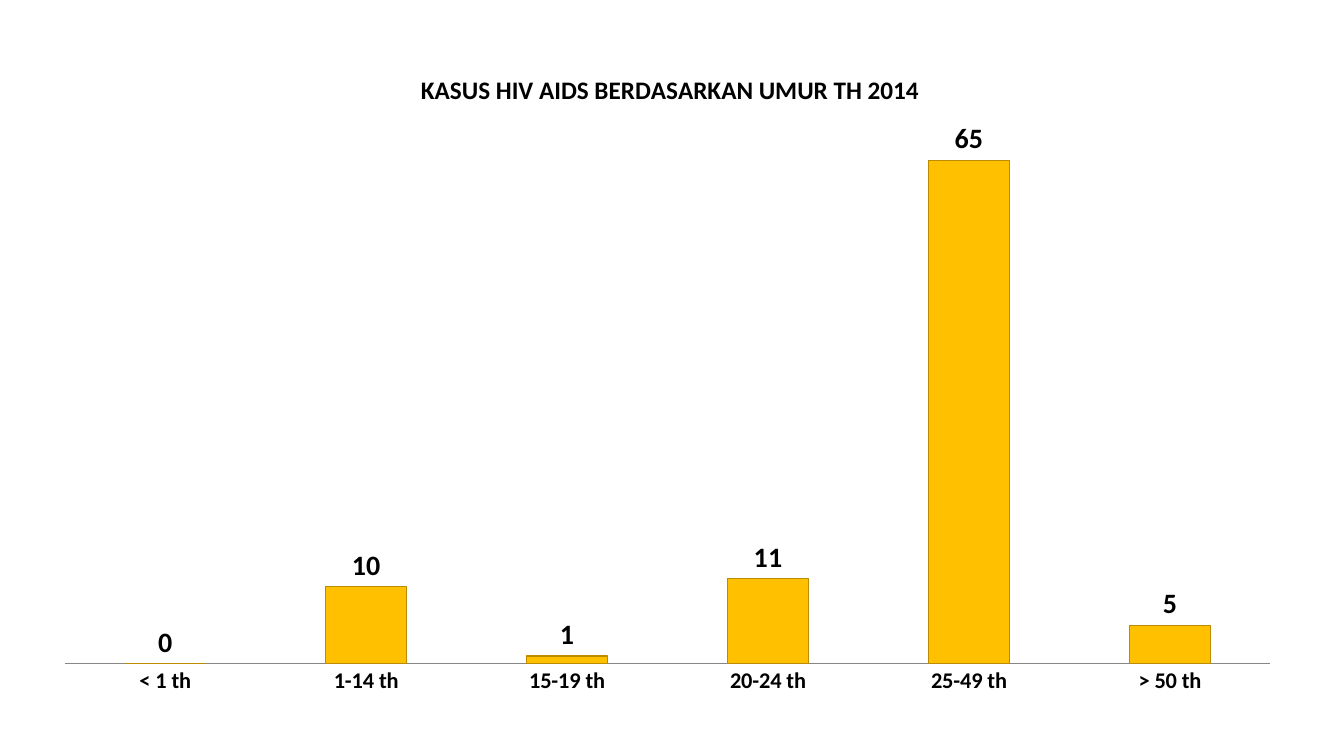
import pptx
import pptx.chart.data
import pptx.dml.color
import pptx.enum.chart
import pptx.oxml
import pptx.oxml.ns
import pptx.util

Cm = pptx.util.Cm
Pt = pptx.util.Pt
RGBColor = pptx.dml.color.RGBColor

BLACK = RGBColor(0x00, 0x00, 0x00)
GOLD = RGBColor(0xFF, 0xC0, 0x00)
BRONZE = RGBColor(0xBC, 0x8C, 0x00)
GREY = RGBColor(0x87, 0x87, 0x87)

CASES = {
    "< 1 th": 0,
    "1-14 th": 10,
    "15-19 th": 1,
    "20-24 th": 11,
    "25-49 th": 65,
    "> 50 th": 5,
}


def style(font, size, bold=True, color=BLACK):
    font.name = "Calibri"
    font.size = Pt(size)
    font.bold = bold
    font.color.rgb = color


def write(frame, text, **form):
    """Put one run of text in the frame and format it."""
    run = frame.paragraphs[0].add_run()
    run.text = text
    style(run.font, **form)


def place(parent, index, target=None, **parts):
    """Set a manual layout, in fractions of the chart, as child number index."""
    for old in parent.findall(pptx.oxml.ns.qn("c:layout")):
        parent.remove(old)
    inner = f'<c:layoutTarget val="{target}"/>' if target else ""
    inner += "".join(f'<c:{key}Mode val="edge"/>' for key in ("x", "y"))
    inner += "".join(f'<c:{key} val="{part}"/>' for key, part in parts.items())
    space = pptx.oxml.ns.nsdecls("c")
    layout = pptx.oxml.parse_xml(
        f"<c:layout {space}><c:manualLayout>{inner}</c:manualLayout></c:layout>"
    )
    parent.insert(index, layout)


def add_bars(slide, cases, left, top, width, height):
    data = pptx.chart.data.CategoryChartData()
    data.categories = list(cases)
    data.add_series("Series 1", list(cases.values()))
    kind = pptx.enum.chart.XL_CHART_TYPE.COLUMN_CLUSTERED
    chart = slide.shapes.add_chart(kind, left, top, width, height, data).chart
    style(chart.font, 10, bold=False)
    chart.has_legend = False
    plot = chart.plots[0]
    plot.gap_width = 150
    plot.vary_by_categories = False
    bars = plot.series[0].format
    bars.fill.solid()
    bars.fill.fore_color.rgb = GOLD
    bars.line.color.rgb = BRONZE
    bars.line.width = Pt(0.75)
    return chart


def add_labels(plot):
    plot.has_data_labels = True
    labels = plot.data_labels
    labels.show_value = True
    labels.position = pptx.enum.chart.XL_LABEL_POSITION.OUTSIDE_END
    style(labels.font, 20)


def set_axes(chart):
    ages = chart.category_axis
    ages.major_tick_mark = pptx.enum.chart.XL_TICK_MARK.NONE
    ages.format.line.color.rgb = GREY
    ages.format.line.width = Pt(0.75)
    style(ages.tick_labels.font, 16)
    count = chart.value_axis
    count.minimum_scale = 0
    count.maximum_scale = 70
    count.has_major_gridlines = False
    count.visible = False


def main():
    deck = pptx.Presentation()
    deck.slide_width = Cm(33.87)
    deck.slide_height = Cm(19.05)
    slide = deck.slides.add_slide(deck.slide_layouts[6])
    chart = add_bars(slide, CASES, Cm(1), Cm(1.04), Cm(31.65), Cm(16.87))
    add_labels(chart.plots[0])
    set_axes(chart)

    chart.has_title = True
    title = chart.chart_title
    write(title.text_frame, "KASUS HIV AIDS BERDASARKAN UMUR TH 2014", size=18)
    title.include_in_layout = False
    place(title.format.element if hasattr(title.format, "element") else title.element, 1, x=0.3, y=0.04)
    area = chart.element.chart.plotArea
    place(area, 0, target="inner", x=0.02, y=0.12, w=0.96, h=0.81)
    deck.save("out.pptx")


if __name__ == "__main__":
    main()
